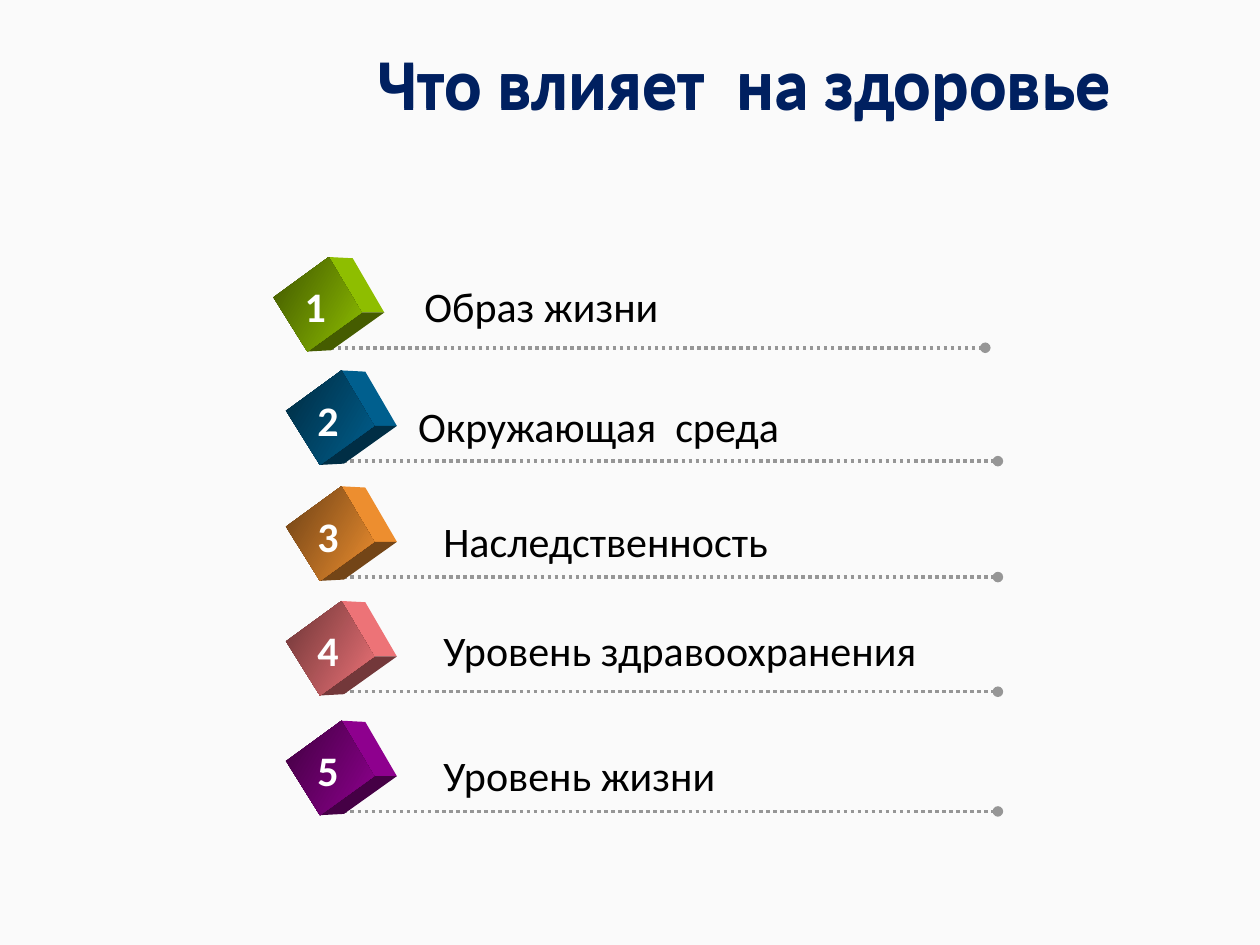
from lxml.etree import SubElement
from pptx import Presentation
from pptx.dml.color import RGBColor
from pptx.enum.dml import MSO_LINE
from pptx.enum.shapes import MSO_CONNECTOR
from pptx.enum.text import MSO_ANCHOR, PP_ALIGN
from pptx.oxml.ns import qn
from pptx.util import Inches, Pt

TITLE = "Что влияет  на здоровье"
FACTORS = [
    ("Образ жизни", "99CC00", 25.7, 27.6, 7, -5.8, 45.5),
    ("Окружающая  среда", "006699", 26.7, 36.6, 5.5, -5.3, 31.7),
    ("Наследственность", "FF9933", 26.7, 45.8, 7.5, -5.4, 28),
    ("Уровень здравоохранения", "FF7C80", 26.7, 54.9, 7.5, -5.8, 40.6),
    ("Уровень жизни", "990099", 26.7, 64.4, 7.5, -5.4, 24.6),
]
FRONT = [(-4, -4), (0.4, -7.2), (3, -2.8), (-1.3, 0.3)]
SIDE = [(0.4, -7.2), (2.3, -7.1), (4.8, -2.8), (3, -2.8)]
BOTTOM = [(3, -2.8), (4.8, -2.8), (0.6, 0.2), (-1.3, 0.3)]


def color(value, share=1):
    """Turn a hex string into a colour, darkened to the given share."""
    return RGBColor(*(round(part * share) for part in RGBColor.from_string(value)))


def grid(cells):
    """Convert grid columns or rows, ten to the inch, into a length."""
    return Inches(cells / 10)


class SlideBuilder:
    """Holds the style and the current slide of the deck."""

    font = "Calibri"
    navy, black, white, gray, paper = "002060", "000000", "FFFFFF", "969696", "FAFAFA"

    def __init__(self):
        """Start a deck of 100 columns by 75 rows with a title-only slide."""
        self.deck = Presentation()
        self.deck.slide_width, self.deck.slide_height = grid(100), grid(75)
        self.page = self.deck.slides.add_slide(self.deck.slide_layouts[5])
        self.page.background.fill.solid()
        self.page.background.fill.fore_color.rgb = color(self.paper)

    def set_text(self, box, text, size, ink, bold=False):
        """Put one styled paragraph into a box and return it."""
        box.text_frame.word_wrap = True
        paragraph = box.text_frame.paragraphs[0]
        paragraph.text = text
        font = paragraph.font
        font.name, font.size, font.bold = self.font, Pt(size), bold
        font.color.rgb = color(ink)
        return paragraph

    def heading(self, box, text, left, top, width, height):
        """Place and format a centred heading box."""
        box.left, box.top, box.width, box.height = map(grid, (left, top, width, height))
        box.text_frame.vertical_anchor = MSO_ANCHOR.MIDDLE
        paragraph = self.set_text(box, text, 40, self.navy, True)
        paragraph.alignment, paragraph.line_spacing = PP_ALIGN.CENTER, 0.9

    def title(self, text):
        """Set the title with its slightly raised double."""
        self.heading(self.page.shapes.title, text, 25.1, 2.1, 68, 9.8)
        self.heading(self.page.shapes.add_textbox(0, 0, 0, 0), text, 25.1, 1.9, 68, 9.8)

    def label(self, shapes, text, left, top, width, ink, bold=False):
        """Add a line of body text."""
        box = shapes.add_textbox(grid(left), grid(top), grid(width), grid(5.1))
        self.set_text(box, text, 24, ink, bold)

    def rule(self, shapes, left, top, length):
        """Add a dotted rule that ends in a dot."""
        rule = shapes.add_connector(
            MSO_CONNECTOR.STRAIGHT, grid(left), grid(top), grid(left + length), grid(top))
        rule.line.color.rgb = color(self.gray)
        rule.line.width = Pt(2)
        rule.line.dash_style = MSO_LINE.ROUND_DOT
        properties = rule._element.spPr
        SubElement(properties.find(qn("a:ln")), qn("a:tailEnd"), type="oval")
        SubElement(properties, qn("a:effectLst"))

    def face(self, shapes, corners, left, top, fill, shares):
        """Add one face of a cube, shaded from the first share to the last."""
        points = [(grid(left + x), grid(top + y)) for x, y in corners]
        builder = shapes.build_freeform(*points[0], scale=1.0)
        builder.add_line_segments(points[1:], close=True)
        shape = builder.convert_to_shape()
        shape.shadow.inherit = False
        shape.line.fill.background()
        if len(shares) == 1:
            shape.fill.solid()
            shape.fill.fore_color.rgb = color(fill, shares[0])
        else:
            shape.fill.gradient()
            shape.fill.gradient_angle = 330
            for stop, share in zip(shape.fill.gradient_stops, shares):
                stop.color.rgb = color(fill, share)

    def factor(self, number, text, fill, left, top, indent, rise, width):
        """Add a numbered cube with its rule and label as one group."""
        shapes = self.page.shapes.add_group_shape().shapes
        self.rule(shapes, left, top, 52.5)
        for corners, shares in ((SIDE, [0.93]), (BOTTOM, [0.45]), (FRONT, [0.42, 0.93])):
            self.face(shapes, corners, left, top, fill, shares)
        self.label(shapes, text, left + indent, top + rise, width, self.black)
        self.label(shapes, str(number), left - 2.5, top - 5.8, 3.9, self.white, True)


def main():
    """Build and save the slide."""
    builder = SlideBuilder()
    builder.title(TITLE)
    for number, factor in enumerate(FACTORS, 1):
        builder.factor(number, *factor)
    builder.deck.save("out.pptx")


if __name__ == "__main__":
    main()
